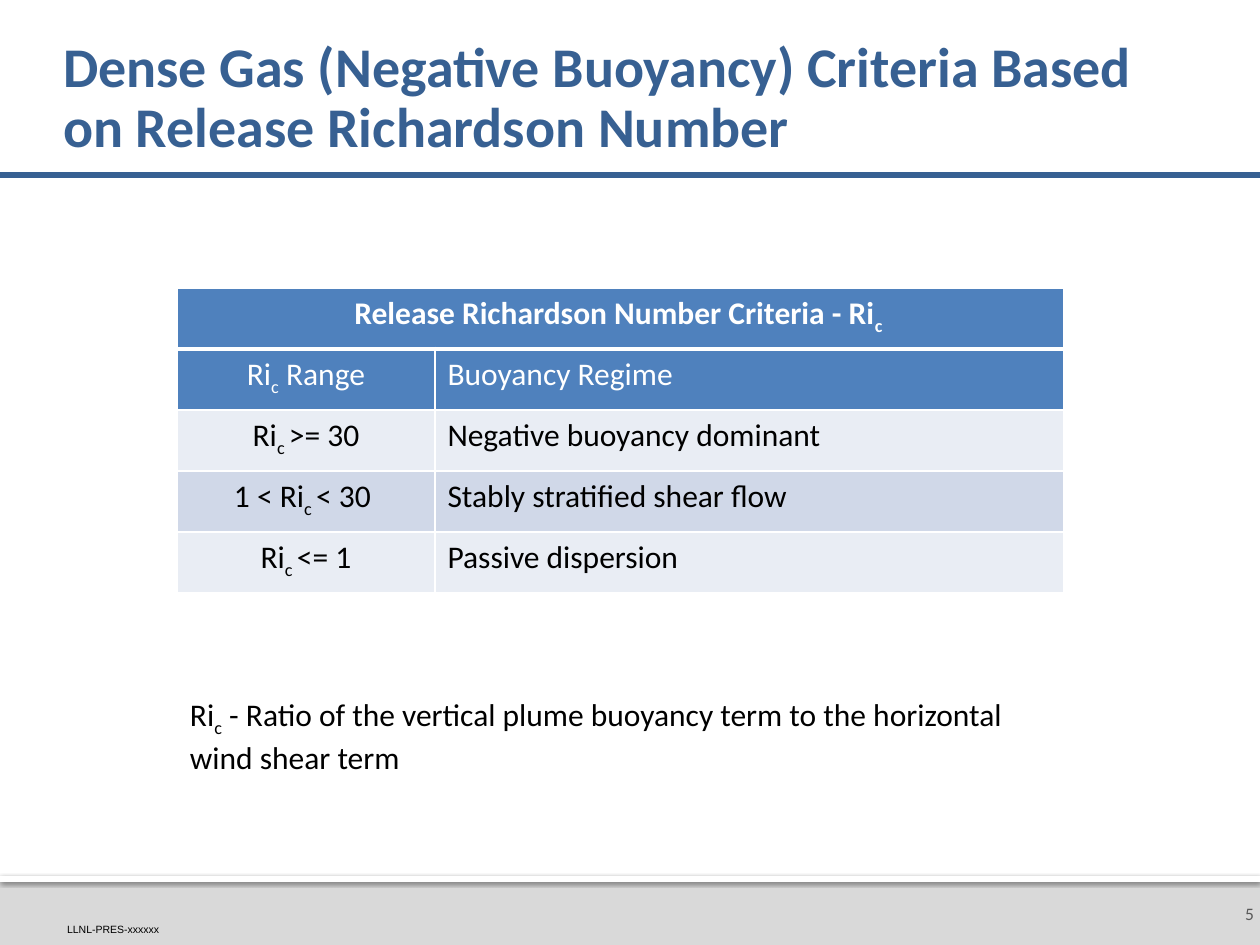
"""Build the slide on release Richardson number criteria for dense gas."""
from lxml.etree import SubElement
from pptx import Presentation
from pptx.dml.color import RGBColor
from pptx.enum.shapes import MSO_CONNECTOR, MSO_SHAPE
from pptx.enum.text import MSO_ANCHOR as Anchor, MSO_AUTO_SIZE as AutoSize, PP_ALIGN as Align
from pptx.oxml import parse_xml
from pptx.oxml.ns import nsdecls, qn
from pptx.util import Emu, Pt

SCALE = 914400 / 126
BLUE = RGBColor(0x37, 0x60, 0x92)
HEADER = RGBColor(0x4F, 0x81, 0xBD)
LIGHT = RGBColor(0xE9, 0xED, 0xF4)
MEDIUM = RGBColor(0xD0, 0xD8, 0xE8)
GREY = RGBColor(0xD9, 0xD9, 0xD9)
DARK_GREY = RGBColor(0x59, 0x59, 0x59)
WHITE = RGBColor(0xFF, 0xFF, 0xFF)
BLACK = RGBColor(0x00, 0x00, 0x00)

BODY = {"name": "Calibri", "size": Pt(18), "bold": False}
TITLE = {"name": "Calibri", "size": Pt(32), "bold": True}
PAGE = {"name": "Calibri", "size": Pt(10)}
RELEASE = {"name": "Arial", "size": Pt(6)}

TITLE_TEXT = "Dense Gas (Negative Buoyancy) Criteria Based on Release Richardson Number"
NOTE = "Ri~c~ - Ratio of the vertical plume buoyancy term to the horizontal wind shear term"
CRITERIA = [
    (["Release Richardson Number Criteria - Ri~c "], HEADER, WHITE),
    (["Ri~c~ Range", "Buoyancy Regime"], HEADER, WHITE),
    (["Ri~c ~>= 30", "Negative buoyancy dominant"], LIGHT, BLACK),
    (["1 < Ri~c ~< 30 ", "Stably stratified shear flow"], MEDIUM, BLACK),
    (["Ri~c ~<= 1", "Passive dispersion"], LIGHT, BLACK),
]
COLUMNS = (258, 629)
ROW_HEIGHT = 61


def px(*lengths):
    """Turn pixel lengths into a list of EMU lengths."""
    return [Emu(round(length * SCALE)) for length in lengths]


def write(frame, text, style, color, align=Align.LEFT):
    """Write one paragraph in which ~ switches subscript on and off."""
    paragraph = frame.paragraphs[0]
    paragraph.alignment = align
    for index, part in enumerate(text.split("~")):
        if not part:
            continue
        run = paragraph.add_run()
        run.text = part
        for name, value in style.items():
            setattr(run.font, name, value)
        run.font.color.rgb = color
        if index % 2:
            run.font._element.set("baseline", "-25000")
    return paragraph


def set_frame(frame, insets, anchor, auto_size=AutoSize.NONE):
    """Set wrapping, insets (left, top, right, bottom), anchor and fitting."""
    left, top, right, bottom = px(*insets)
    layout = {
        "word_wrap": True, "auto_size": auto_size, "vertical_anchor": anchor,
        "margin_left": left, "margin_top": top,
        "margin_right": right, "margin_bottom": bottom,
    }
    for name, value in layout.items():
        setattr(frame, name, value)


def add_text(slide, box, text, style, color, insets, anchor=Anchor.TOP,
             align=Align.LEFT, auto_size=AutoSize.NONE):
    """Add a text box with one paragraph."""
    frame = slide.shapes.add_textbox(*px(*box)).text_frame
    set_frame(frame, insets, anchor, auto_size)
    write(frame, text, style, color, align)


def add_band(slide, box, color):
    """Add a plain filled band without outline or shadow."""
    band = slide.shapes.add_shape(MSO_SHAPE.RECTANGLE, *px(*box))
    band.shadow.inherit = False
    band.fill.solid()
    band.fill.fore_color.rgb = color
    band.line.fill.background()
    return band


def add_shadow(shape):
    """Give a shape a soft shadow that falls straight down."""
    effects = shape._element.spPr.find(qn("a:effectLst"))
    effects.append(parse_xml(
        f'<a:outerShdw {nsdecls("a")} blurRad="{Pt(2.5)}" dist="{Pt(0.8)}" '
        'dir="5400000" rotWithShape="0"><a:srgbClr val="000000">'
        '<a:alpha val="60000"/></a:srgbClr></a:outerShdw>'))


def add_footer(slide):
    """Add the footer bands, the page number and the release number."""
    add_band(slide, (0, 876, 1260, 69), GREY)
    add_shadow(add_band(slide, (0, 876, 1260, 6), WHITE))
    add_text(slide, (1216, 882, 44, 63), "5", PAGE, DARK_GREY, (13, 6, 6, 6),
             Anchor.MIDDLE, Align.RIGHT)
    add_text(slide, (67, 923, 121, 13), "LLNL-PRES-xxxxxx", RELEASE, BLACK,
             (0, 0, 0, 0), Anchor.BOTTOM, auto_size=AutoSize.SHAPE_TO_FIT_TEXT)


def add_rule(slide):
    """Add the rule under the title."""
    rule = slide.shapes.add_connector(MSO_CONNECTOR.STRAIGHT, *px(-1, 175, 1260, 175))
    rule.line.color.rgb = BLUE
    rule.line.width = Pt(3)
    SubElement(rule._element.spPr, qn("a:effectLst"))


def fill_title(slide):
    """Place and fill the title placeholder."""
    title = slide.shapes.title
    title.left, title.top, title.width, title.height = px(63, 30, 1134, 139)
    set_frame(title.text_frame, (0, 6, 6, 6), Anchor.MIDDLE)
    write(title.text_frame, TITLE_TEXT, TITLE, BLUE).line_spacing = 0.9


def set_borders(cell, top, bottom):
    """Draw white cell borders with the given top and bottom widths in points."""
    properties = cell._tc.get_or_add_tcPr()
    for side, width in {"L": 1, "R": 1, "T": top, "B": bottom}.items():
        properties.append(parse_xml(
            f'<a:ln{side} {nsdecls("a")} w="{Pt(width)}"><a:solidFill>'
            f'<a:srgbClr val="{WHITE}"/></a:solidFill></a:ln{side}>'))


def add_criteria(slide):
    """Add the table of buoyancy regimes under a merged heading."""
    box = (177, 288, sum(COLUMNS), ROW_HEIGHT * len(CRITERIA))
    table = slide.shapes.add_table(len(CRITERIA), len(COLUMNS), *px(*box)).table
    for column, width in zip(table.columns, px(*COLUMNS)):
        column.width = width
    table.cell(0, 0).merge(table.cell(0, 1))
    for row, (texts, fill, color) in enumerate(CRITERIA):
        table.rows[row].height = px(ROW_HEIGHT)[0]
        for column in range(len(COLUMNS)):
            cell = table.cell(row, column)
            set_borders(cell, 3 if row == 1 else 1, 3 if row == 0 else 1)
            cell.fill.solid()
            cell.fill.fore_color.rgb = fill
        for column, text in enumerate(texts):
            write(table.cell(row, column).text_frame, text,
                  {**BODY, "bold": row == 0}, color,
                  Align.LEFT if column else Align.CENTER)


def main():
    """Build and save the presentation."""
    deck = Presentation()
    deck.slide_width, deck.slide_height = px(1260, 945)
    slide = deck.slides.add_slide(deck.slide_layouts[5])
    add_footer(slide)
    add_rule(slide)
    fill_title(slide)
    add_criteria(slide)
    add_text(slide, (177, 689, 887, 89), NOTE, BODY, BLACK, (13, 6, 13, 6),
             auto_size=AutoSize.SHAPE_TO_FIT_TEXT)
    deck.save("out.pptx")


if __name__ == "__main__":
    main()
